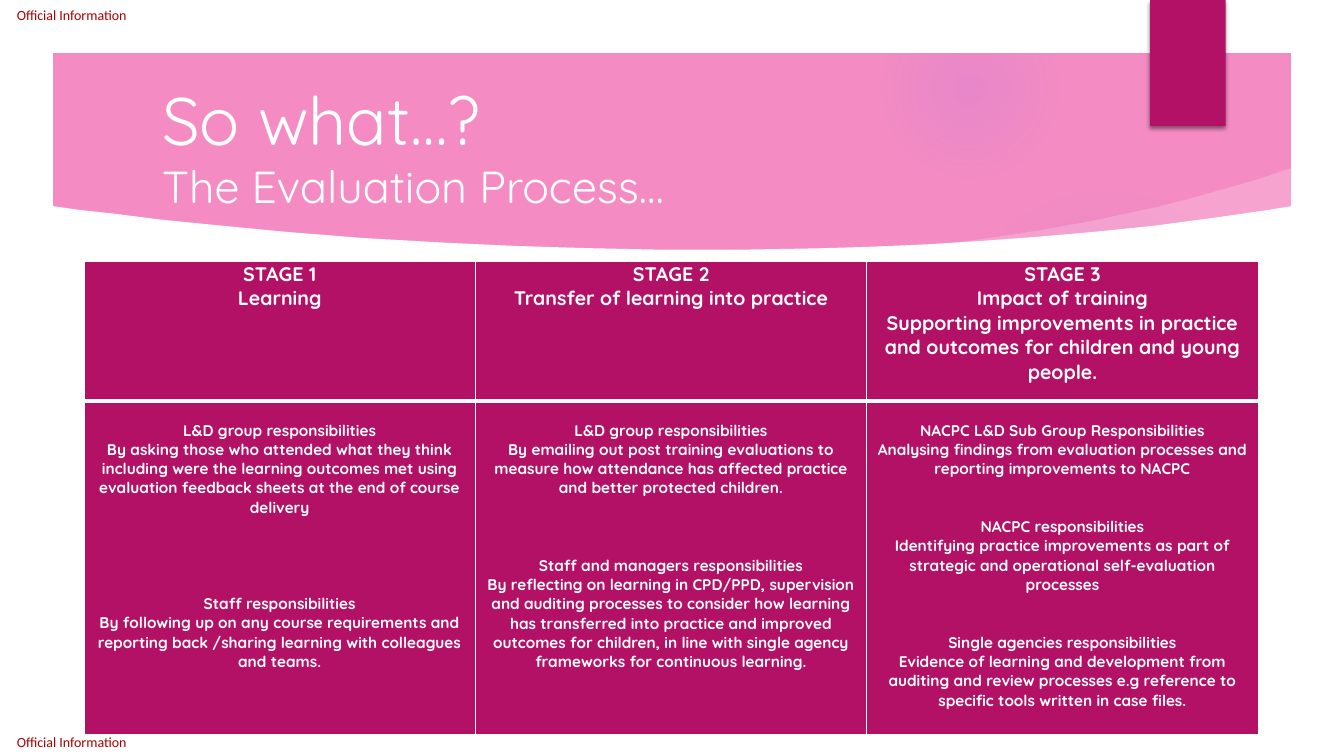
from dataclasses import dataclass
from lxml.etree import SubElement
from pptx import Presentation
from pptx.dml.color import RGBColor
from pptx.enum.shapes import MSO_SHAPE
from pptx.enum.text import MSO_ANCHOR, PP_ALIGN
from pptx.oxml import parse_xml
from pptx.oxml.ns import nsdecls, qn
from pptx.util import Pt

# Content
LABEL = "Official Information"
TITLE = ["So what…?", "The Evaluation Process…"]
HEADS = [
    ["STAGE 1", "Learning"],
    ["STAGE 2", "Transfer of learning into practice"],
    ["STAGE 3", "Impact of training",
     "Supporting improvements in practice and outcomes for children and young people."],
]
# Each stage: blank lines between duties, then (who, what) pairs
DUTIES = [
    (4, [("L&D group responsibilities",
          "By asking those who attended what they think including were the learning "
          "outcomes met using evaluation feedback sheets at the end of course delivery"),
         ("Staff responsibilities",
          "By following up on any course requirements and reporting back /sharing "
          "learning with colleagues and teams.")]),
    (3, [("L&D group responsibilities",
          "By emailing out post training evaluations to measure how attendance has "
          "affected practice and better protected children."),
         ("Staff and managers responsibilities",
          "By reflecting on learning in CPD/PPD, supervision and auditing processes to "
          "consider how learning has transferred into practice and improved outcomes for "
          "children, in line with single agency frameworks for continuous learning.")]),
    (2, [("NACPC L&D Sub Group Responsibilities",
          "Analysing findings from evaluation processes and reporting improvements to NACPC"),
         ("NACPC responsibilities",
          "Identifying practice improvements as part of strategic and operational "
          "self-evaluation processes"),
         ("Single agencies responsibilities",
          "Evidence of learning and development from auditing and review processes e.g "
          "reference to specific tools written in case files.")]),
]

# Banner outlines and glows, in points
SWOOSH = [(924, 119.5), (899, 128), (873, 135.4), (848, 142.4), (824, 148.5),
          (798, 154), (774, 159), (742, 164.6), (712, 169.3), (670, 175),
          (672, 180), (928, 154)]
WAVE = [(36, 147), (57, 150), (81, 152.6), (114, 156.8), (156, 161), (204, 165.6),
        (259, 170), (320, 173.5), (368, 175.7), (420, 177.3), (473, 178.4),
        (528, 178.4), (585, 177.4), (624, 176.2), (663, 174.5), (703, 172),
        (743, 169), (783, 165.5), (824, 161.3), (864, 156), (904, 150.3),
        (924, 147), (924, 504), (36, 504)]
GLOWS = [(677.5, 131.8, 221.8, [(0, 7), (69, 6), (100, 0)]),
         (630, 0.7, 126, [(0, 14), (36, 7), (73, 0)])]
GLOWS[0][3][1:] = [(36, 6), (69, 0)]


@dataclass
class Theme:
    pink: str = "F48CC3"
    plum: str = "B31166"
    glow: str = "9B6BF2"
    white: str = "FFFFFF"
    red: str = "A80000"
    face: str = "Quicksand"
    plain: str = "Calibri"
    title: tuple = (48, 32)
    head: float = 14
    body: float = 11
    label: float = 10


T = Theme()
WIDE, HIGH = 960, 540
LINE = 13.75  # height of one body line


def paint(shape, color):
    shape.shadow.inherit = False
    shape.fill.solid()
    shape.fill.fore_color.rgb = RGBColor.from_string(color)
    shape.line.fill.background()


def shape_at(kind, x, y, w, h, color):
    shape = slide.shapes.add_shape(kind, Pt(x), Pt(y), Pt(w), Pt(h))
    paint(shape, color)
    return shape


def outline(points, color):
    pen = slide.shapes.build_freeform(*[round(n * 100) for n in points[0]],
                                      scale=Pt(1) / 100)
    pen.add_line_segments([(round(x * 100), round(y * 100)) for x, y in points[1:]])
    shape = pen.convert_to_shape()
    paint(shape, color)
    return shape


def write(frame, rows, face, color, bold=False, align=PP_ALIGN.LEFT):
    """Fill a frame from (text, size, space before) rows."""
    frame.word_wrap = True
    for i, (text, size, gap) in enumerate(rows):
        para = frame.paragraphs[0] if i == 0 else frame.add_paragraph()
        para.alignment = align
        para.space_before = Pt(gap)
        run = para.add_run()
        run.text = text
        run.font.name, run.font.size, run.font.bold = face, Pt(size), bold
        run.font.color.rgb = RGBColor.from_string(color)


def fill_cell(cell, rows, top, edges):
    cell.margin_left = cell.margin_right = Pt(4.5)
    cell.margin_top, cell.margin_bottom = Pt(top), Pt(0)
    props = cell._tc.get_or_add_tcPr()
    for side, width in zip("LRTB", edges):
        edge = SubElement(props, qn(f"a:ln{side}"), w=str(Pt(width)))
        SubElement(SubElement(edge, qn("a:solidFill")), qn("a:srgbClr"), val=T.white)
    cell.fill.solid()
    cell.fill.fore_color.rgb = RGBColor.from_string(T.plum)
    write(cell.text_frame, rows, T.face, T.white, True, PP_ALIGN.CENTER)


deck = Presentation()
deck.slide_width, deck.slide_height = Pt(WIDE), Pt(HIGH)
slide = deck.slides.add_slide(deck.slide_layouts[6])
slide.background.fill.solid()
slide.background.fill.fore_color.rgb = RGBColor.from_string(T.pink)

# Soft glows
for x, y, size, stops in GLOWS:
    ball = shape_at(MSO_SHAPE.OVAL, x, y, size, size, T.glow)
    marks = "".join(f'<a:gs pos="{at * 1000}"><a:srgbClr val="{T.glow}">'
                    f'<a:alpha val="{alpha * 1000}"/></a:srgbClr></a:gs>'
                    for at, alpha in stops)
    props = ball._element.spPr
    solid = props.find(qn("a:solidFill"))
    props.replace(solid, parse_xml(
        f'<a:gradFill {nsdecls("a")}><a:gsLst>{marks}</a:gsLst><a:path path="circle">'
        '<a:fillToRect l="50000" t="50000" r="50000" b="50000"/></a:path></a:gradFill>'))

# Banner edge and white frame
sweep = outline(SWOOSH, T.white)
tint = sweep._element.spPr.find(qn("a:solidFill"))[0]
SubElement(tint, qn("a:alpha"), val="20000")
outline(WAVE, T.white)
border = shape_at(MSO_SHAPE.FRAME, 0, 0, WIDE, HIGH, T.white)
border.adjustments[0] = 0.07

# Labels at top and bottom
for y in (0, 519.3):
    box = slide.shapes.add_textbox(Pt(0), Pt(y), Pt(102.2), Pt(20.7))
    frame = box.text_frame
    frame.margin_left, frame.margin_right = Pt(12), Pt(0)
    frame.margin_top = frame.margin_bottom = Pt(0)
    frame.vertical_anchor = MSO_ANCHOR.MIDDLE
    write(frame, [(LABEL, T.label, 0)], T.plain, T.red)

# Ribbon tab
tab = shape_at(MSO_SHAPE.RECTANGLE, 821.5, 0, 54, 90, T.plum)
shade = SubElement(tab._element.spPr.find(qn("a:effectLst")), qn("a:outerShdw"),
                   blurRad=str(Pt(3)), dist=str(Pt(2)), dir="5400000", rotWithShape="0")
SubElement(SubElement(shade, qn("a:srgbClr"), val="000000"), qn("a:alpha"), val="45000")

# Stage table
grid = slide.shapes.add_table(2, len(HEADS), Pt(60), Pt(186.7), Pt(838.8), Pt(338)).table
grid.rows[0].height, grid.rows[1].height = Pt(100), Pt(238)
for col, (head, (blank, pairs)) in enumerate(zip(HEADS, DUTIES)):
    fill_cell(grid.cell(0, col), [(text, T.head, 0) for text in head], 0, (1, 1, 1, 3))
    rows = []
    for who, what in pairs:
        rows += [(who, T.body, blank * LINE if rows else 0), (what, T.body, 0)]
    fill_cell(grid.cell(1, col), rows, LINE, (1, 1, 3, 1))

# Title
box = slide.shapes.add_textbox(Pt(108.7), Pt(52.5), Pt(616.3), Pt(104.4))
write(box.text_frame, [(text, size, 0) for text, size in zip(TITLE, T.title)],
      T.face, T.white)

deck.save("out.pptx")
